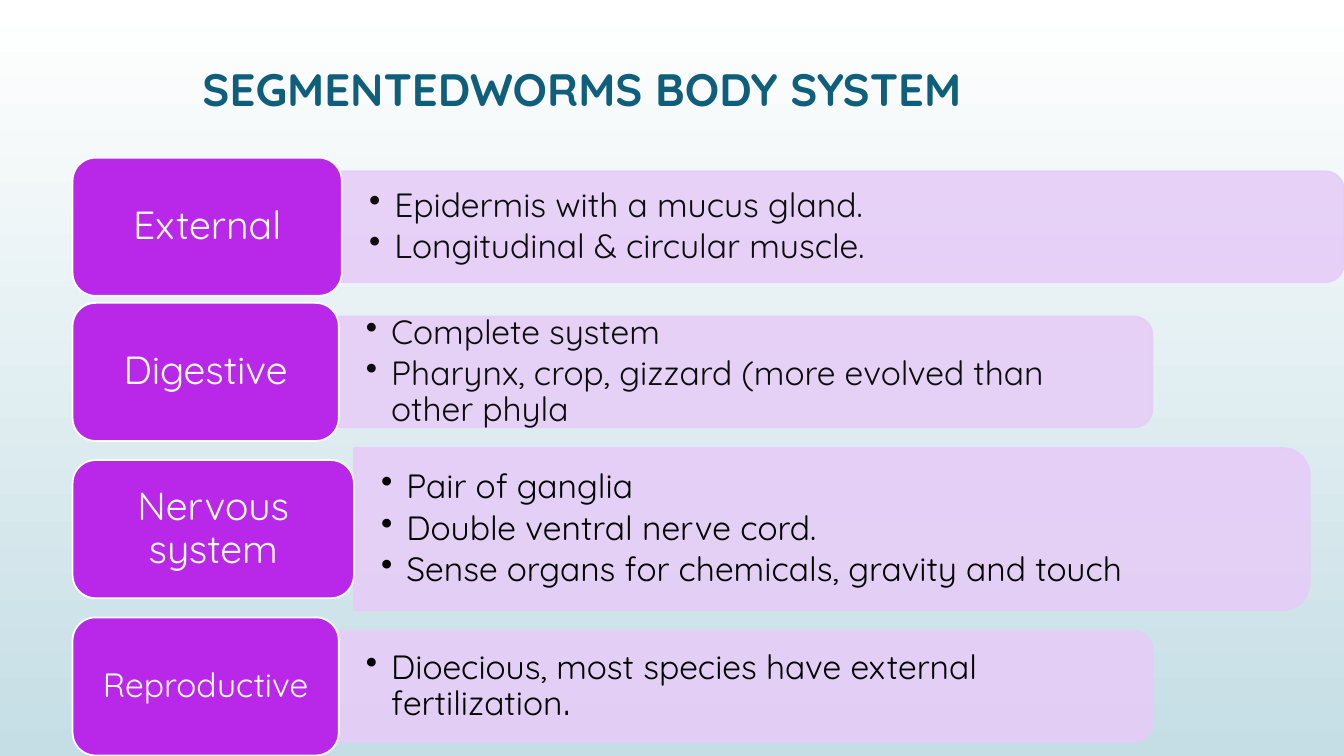
import pptx
import pptx.util
import pptx.dml.color
import pptx.enum.shapes
import pptx.enum.text
import pptx.oxml.ns
import lxml.etree

Inches, Pt = pptx.util.Inches, pptx.util.Pt
RGBColor = pptx.dml.color.RGBColor
SHAPES = pptx.enum.shapes.MSO_SHAPE
ALIGN = pptx.enum.text.PP_ALIGN
qn = pptx.oxml.ns.qn

TITLE = "SEGMENTEDWORMS BODY SYSTEM"
WHITE = RGBColor(0xFF, 0xFF, 0xFF)
MIST = RGBColor(0xC5, 0xDE, 0xE5)
TEAL = RGBColor(0x0F, 0x5E, 0x7C)
PURPLE = RGBColor(0xB9, 0x27, 0xE9)
LILAC = RGBColor(0xE6, 0xCD, 0xF7)
INK = RGBColor(0x0D, 0x0D, 0x0D)
BLACK = RGBColor(0, 0, 0)
FONT, STOP_FONT = "Quicksand", "TeX Gyre Adventor"

# Each system: name, name size, facts, fact colour, row centre, tab width, bar width, bar height
SYSTEMS = [
    ("External", 28, ["Epidermis with a mucus gland.", "Longitudinal & circular muscle."],
     INK, 2.25, 2.67, 9.94, 1.1),
    ("Digestive", 28, ["Complete system", "Pharynx, crop, gizzard (more evolved than other phyla"],
     INK, 3.69, 2.64, 8.07, 1.1),
    ("Nervous system", 28, ["Pair of ganglia", "Double ventral nerve cord.",
                            "Sense organs for chemicals, gravity and touch"],
     BLACK, 5.25, 2.79, 9.48, 1.61),
    ("Reproductive", 24, [("Dioecious, most species have external fertilization", ".")],
     BLACK, 6.81, 2.64, 8.07, 1.1),
]
TAB_LEFT, TAB_HEIGHT = 0.72, 1.37
FACT_SIZE, INDENT = 24, 0.25

presentation = pptx.Presentation()
presentation.slide_width, presentation.slide_height = Inches(13.33), Inches(7.5)
slide = presentation.slides.add_slide(presentation.slide_layouts[6])


def write_text(shape, paragraphs, size, color, bold=False, align=ALIGN.LEFT,
               margins=(0.1, 0.05), line_spacing=1.0, space_after=0.0, bullets=False):
    """Fill a shape with paragraphs; a tuple ends in a run set in STOP_FONT."""
    frame = shape.text_frame
    frame.word_wrap = True
    frame.vertical_anchor = pptx.enum.text.MSO_ANCHOR.MIDDLE
    frame.margin_left = frame.margin_right = Inches(margins[0])
    frame.margin_top = frame.margin_bottom = Inches(margins[1])
    for index, content in enumerate(paragraphs):
        paragraph = frame.add_paragraph() if index else frame.paragraphs[0]
        paragraph.alignment = align
        paragraph.line_spacing = line_spacing
        paragraph.space_after = Pt(round(size * space_after, 1))
        parts = content if isinstance(content, tuple) else (content,)
        for text, font_name in zip(parts, (FONT, STOP_FONT)):
            run = paragraph.add_run()
            run.text = text
            run.font.name, run.font.size, run.font.bold = font_name, Pt(size), bold
            run.font.color.rgb = color
        if bullets:
            properties = paragraph._p.get_or_add_pPr()
            properties.set("marL", str(Inches(INDENT)))
            properties.set("indent", str(-Inches(INDENT)))
            lxml.etree.SubElement(properties, qn("a:buChar"), char="•")


def add_box(kind, left, top, width, height, fill, line):
    shape = slide.shapes.add_shape(kind, Inches(left), Inches(top), Inches(width), Inches(height))
    shape.shadow.inherit = False
    shape.fill.solid()
    shape.fill.fore_color.rgb = fill
    shape.line.color.rgb = line
    shape.line.width = Pt(1.25)
    return shape


def add_text_box(left, top, width, height):
    return slide.shapes.add_textbox(Inches(left), Inches(top), Inches(width), Inches(height))


# Background, fading downwards
background = slide.background.fill
background.gradient()
background.gradient_angle = 270
for stop, color in zip(background.gradient_stops, (WHITE, MIST)):
    stop.color.rgb = color

# Title
write_text(add_text_box(1.91, 0.53, 9.75, 0.69), [TITLE], 32.4, TEAL, bold=True)

# One row per body system
for name, name_size, facts, fact_color, center, tab_width, bar_width, bar_height in SYSTEMS:
    bar_left = TAB_LEFT + tab_width

    # Bar: an upright shape turned a quarter, so its round corners face right
    bar = add_box(SHAPES.ROUND_2_SAME_RECTANGLE, bar_left + (bar_width - bar_height) / 2,
                  center - bar_width / 2, bar_height, bar_width, LILAC, LILAC)
    bar.rotation = 90
    for tint in bar._element.spPr.iter(qn("a:srgbClr")):
        lxml.etree.SubElement(tint, qn("a:alpha"), val="90000")

    # Facts over the bar
    facts_height = bar_height * 0.9
    write_text(add_text_box(bar_left, center - facts_height / 2, bar_width - 0.06, facts_height),
               facts, FACT_SIZE, fact_color, margins=(0.27, 0.14),
               line_spacing=0.9, space_after=0.15, bullets=True)

    # Tab with the name
    tab = add_box(SHAPES.ROUNDED_RECTANGLE, TAB_LEFT, center - TAB_HEIGHT / 2,
                  tab_width, TAB_HEIGHT, PURPLE, WHITE)
    write_text(tab, [name], name_size, WHITE, align=ALIGN.CENTER, margins=(0.12, 0.06),
               line_spacing=0.9, space_after=0.35)

presentation.save("out.pptx")
